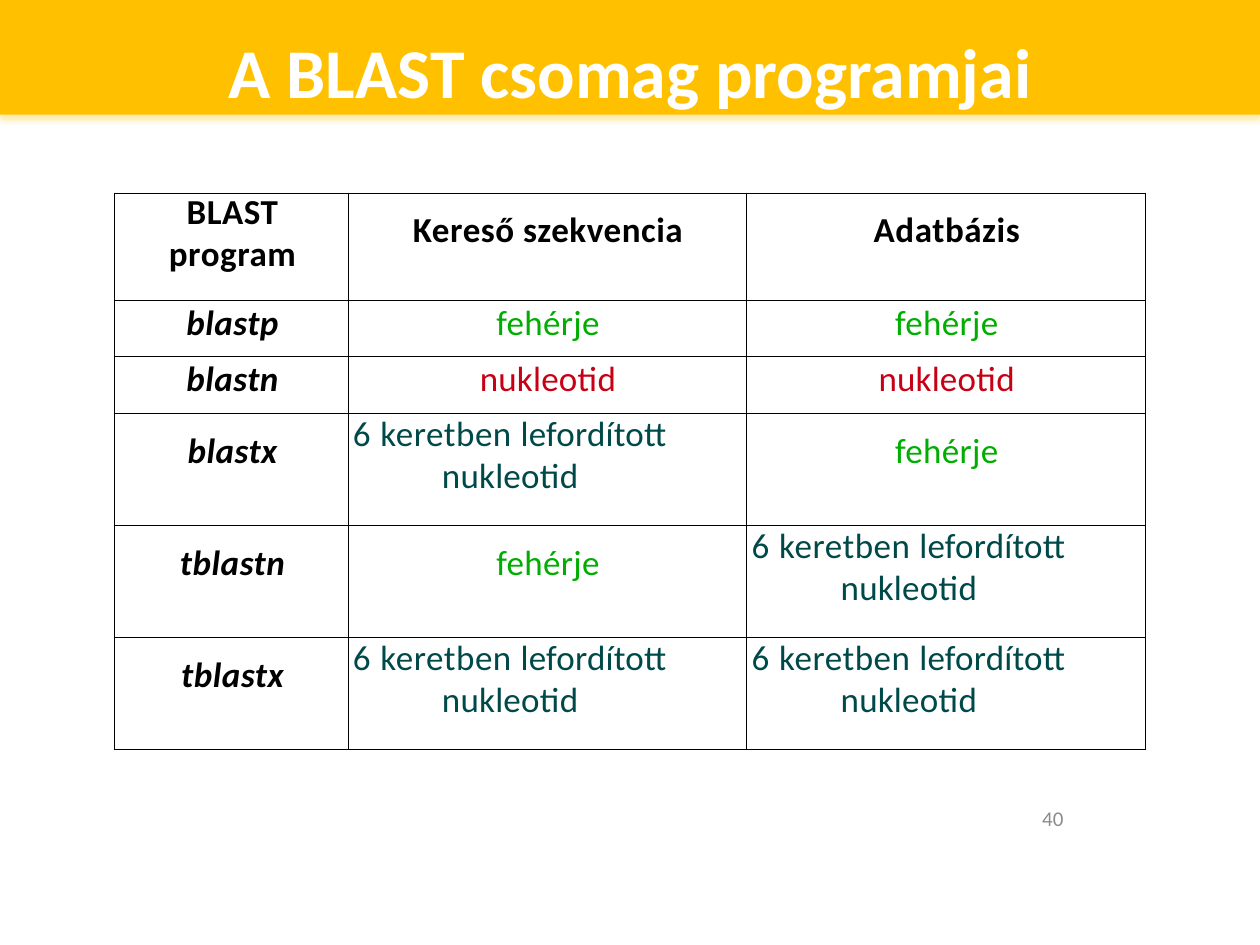
from dataclasses import dataclass
from typing import Optional

from lxml import etree
from pptx import Presentation
from pptx.dml.color import RGBColor
from pptx.enum.shapes import MSO_SHAPE
from pptx.enum.text import MSO_ANCHOR, PP_ALIGN
from pptx.oxml.ns import qn
from pptx.util import Inches, Pt

RECTANGLE = MSO_SHAPE.RECTANGLE
MIDDLE = MSO_ANCHOR.MIDDLE
CENTER, RIGHT = PP_ALIGN.CENTER, PP_ALIGN.RIGHT

AMBER = RGBColor(0xFF, 0xC0, 0x00)
WHITE = RGBColor(0xFF, 0xFF, 0xFF)
BLACK = RGBColor(0x00, 0x00, 0x00)
GRAY = RGBColor(0x8C, 0x8C, 0x8C)
GREEN = RGBColor(0x00, 0xAD, 0x00)
RED = RGBColor(0xC8, 0x00, 0x15)
TEAL = RGBColor(0x00, 0x49, 0x49)
FONT = "Calibri"


@dataclass(frozen=True)
class Span:
    text: str
    spacing: float = 0.2


@dataclass(frozen=True)
class Entry:
    """Content and format of one table cell."""
    lines: tuple[tuple[Span, ...], ...]
    color: RGBColor = BLACK
    bold: bool = False
    italic: bool = False
    translated: bool = False


@dataclass(frozen=True)
class Row:
    entries: tuple[Entry, Entry, Entry]
    height: float
    line_height: Optional[float] = None  # points; None marks a tall row


def header(*lines: str) -> Entry:
    return Entry(tuple((Span(line, 0.3),) for line in lines), bold=True)


def program(name: str) -> Entry:
    return Entry(((Span(name, 0.3),),), bold=True, italic=True)


PROTEIN = Entry(((Span("fehérje"),),), GREEN)
NUCLEOTIDE = Entry(((Span("nukleotid", 0.1),),), RED)
TRANSLATED = Entry(
    ((Span("6 ", 0.5), Span("keretben ", 0.3), Span("lefordított nukleotid", 0.1)),),
    TEAL, translated=True)

COLUMN_WIDTHS = (1.85, 3.16, 3.17)
ROWS = (
    Row((header("BLAST", "program"), header("Kereső szekvencia"), header("Adatbázis")), 0.85),
    Row((program("blastp"), PROTEIN, PROTEIN), 0.45, 25.6),
    Row((program("blastn"), NUCLEOTIDE, NUCLEOTIDE), 0.45, 25.5),
    Row((program("blastx"), TRANSLATED, PROTEIN), 0.89),
    Row((program("tblastn"), PROTEIN, TRANSLATED), 0.89),
    Row((program("tblastx"), TRANSLATED, TRANSLATED), 0.89),
)


def add_span(para, text: str, *, size: float, color: RGBColor, bold: bool = False,
             italic: bool = False, spacing: float = 0) -> None:
    span = para.add_run()
    span.text = text
    font = span.font
    font.name, font.size, font.bold, font.italic = FONT, Pt(size), bold, italic
    font.color.rgb = color
    if spacing:
        span._r.get_or_add_rPr().set("spc", str(round(spacing * 100)))


def set_margins(target, top: float = 0, right: float = 0) -> None:
    target.margin_left = target.margin_bottom = 0
    target.margin_top, target.margin_right = Inches(top), Inches(right)


def set_indent(para, inches: float) -> None:
    properties = para._p.get_or_add_pPr()
    properties.set("marL", str(Inches(inches)))
    properties.set("indent", "0")


def add_text(page, text: str, left: float, top: float, width: float, height: float, *,
             align, size: float, color: RGBColor, bold: bool = False,
             line_spacing=None, space_before: float = 0,
             top_margin: float = 0, indent: float = 0) -> None:
    box = page.shapes.add_textbox(Inches(left), Inches(top), Inches(width), Inches(height))
    frame = box.text_frame
    frame.word_wrap = True
    frame.vertical_anchor = MIDDLE
    set_margins(frame, top_margin)
    para = frame.paragraphs[0]
    para.alignment = align
    para.line_spacing = line_spacing
    para.space_before = Pt(space_before)
    set_indent(para, indent)
    add_span(para, text, size=size, color=color, bold=bold)


def add_banner(page) -> None:
    banner = page.shapes.add_shape(RECTANGLE, 0, Inches(-0.02), Inches(10), Inches(0.93))
    banner.shadow.inherit = False
    banner.fill.solid()
    banner.fill.fore_color.rgb = AMBER
    banner.line.fill.background()
    effects = banner._element.spPr.find(qn("a:effectLst"))
    shadow = etree.SubElement(effects, qn("a:outerShdw"), blurRad=str(Pt(3.5)),
                              dist=str(Pt(2.2)), dir="5400000", rotWithShape="0")
    tint = etree.SubElement(shadow, qn("a:srgbClr"), val=str(AMBER))
    etree.SubElement(tint, qn("a:alpha"), val="32000")


def add_borders(cell) -> None:
    properties = cell._tc.get_or_add_tcPr()
    for position, side in enumerate(("a:lnL", "a:lnR", "a:lnT", "a:lnB")):
        line = etree.Element(qn(side), w=str(Pt(0.25)))
        fill = etree.SubElement(line, qn("a:solidFill"))
        etree.SubElement(fill, qn("a:srgbClr"), val=str(BLACK))
        properties.insert(position, line)


def fill_cell(cell, entry: Entry, line_height: Optional[float]) -> None:
    cell.fill.background()
    add_borders(cell)
    # Single lines in tall rows sit lower; translated entries wrap early
    line_spacing, space_before, top, right = line_height, 0, 0, 0
    if entry.translated:
        line_spacing, space_before, top, right = 23.8, 1.1, 0.01, 0.6
    elif len(entry.lines) > 1:
        line_spacing = 23.8
    elif line_height is None:
        space_before, top = 10.6, 0.13
    set_margins(cell, top, right)
    frame = cell.text_frame
    for index, line in enumerate(entry.lines):
        para = frame.add_paragraph() if index else frame.paragraphs[0]
        para.alignment = CENTER
        para.space_before = Pt(space_before)
        if line_spacing:
            para.line_spacing = Pt(line_spacing)
        set_indent(para, 0.02)
        for span in line:
            add_span(para, span.text, size=20, color=entry.color, bold=entry.bold,
                     italic=entry.italic, spacing=span.spacing)


def add_program_table(page) -> None:
    frame = page.shapes.add_table(len(ROWS), len(COLUMN_WIDTHS), Inches(0.91), Inches(1.53),
                                  Inches(sum(COLUMN_WIDTHS)),
                                  Inches(sum(row.height for row in ROWS)))
    table = frame.table
    table.first_row = table.horz_banding = False
    for column, width in zip(table.columns, COLUMN_WIDTHS):
        column.width = Inches(width)
    for table_row, row in zip(table.rows, ROWS):
        table_row.height = Inches(row.height)
        for cell, entry in zip(table_row.cells, row.entries):
            fill_cell(cell, entry, row.line_height)


def main() -> None:
    deck = Presentation()
    deck.slide_width, deck.slide_height = Inches(10), Inches(7.5)
    page = deck.slides.add_slide(deck.slide_layouts[6])

    # Title band
    add_banner(page)
    add_text(page, "A BLAST csomag programjai", 0, 0.29, 10, 0.62, align=CENTER, size=39.9,
             color=WHITE, bold=True, line_spacing=0.9, space_before=0.9,
             top_margin=0.01, indent=0.01)

    # Page number
    add_text(page, "40", 6.4, 6.39, 2.04, 0.2, align=RIGHT, size=12, color=GRAY,
             line_spacing=Pt(14.8), indent=0.03)

    # Programs with their query and database types
    add_program_table(page)
    deck.save("out.pptx")


if __name__ == "__main__":
    main()
